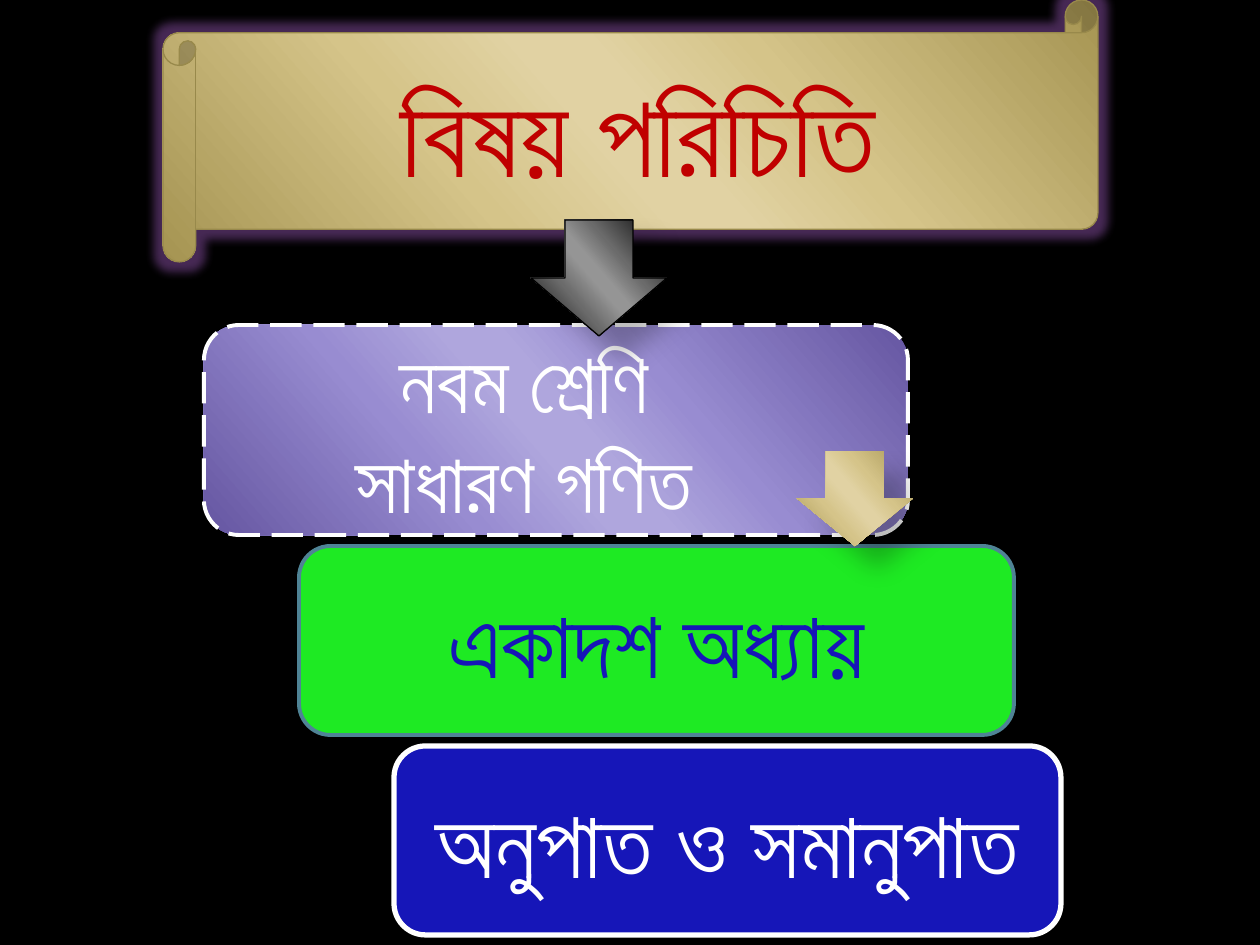
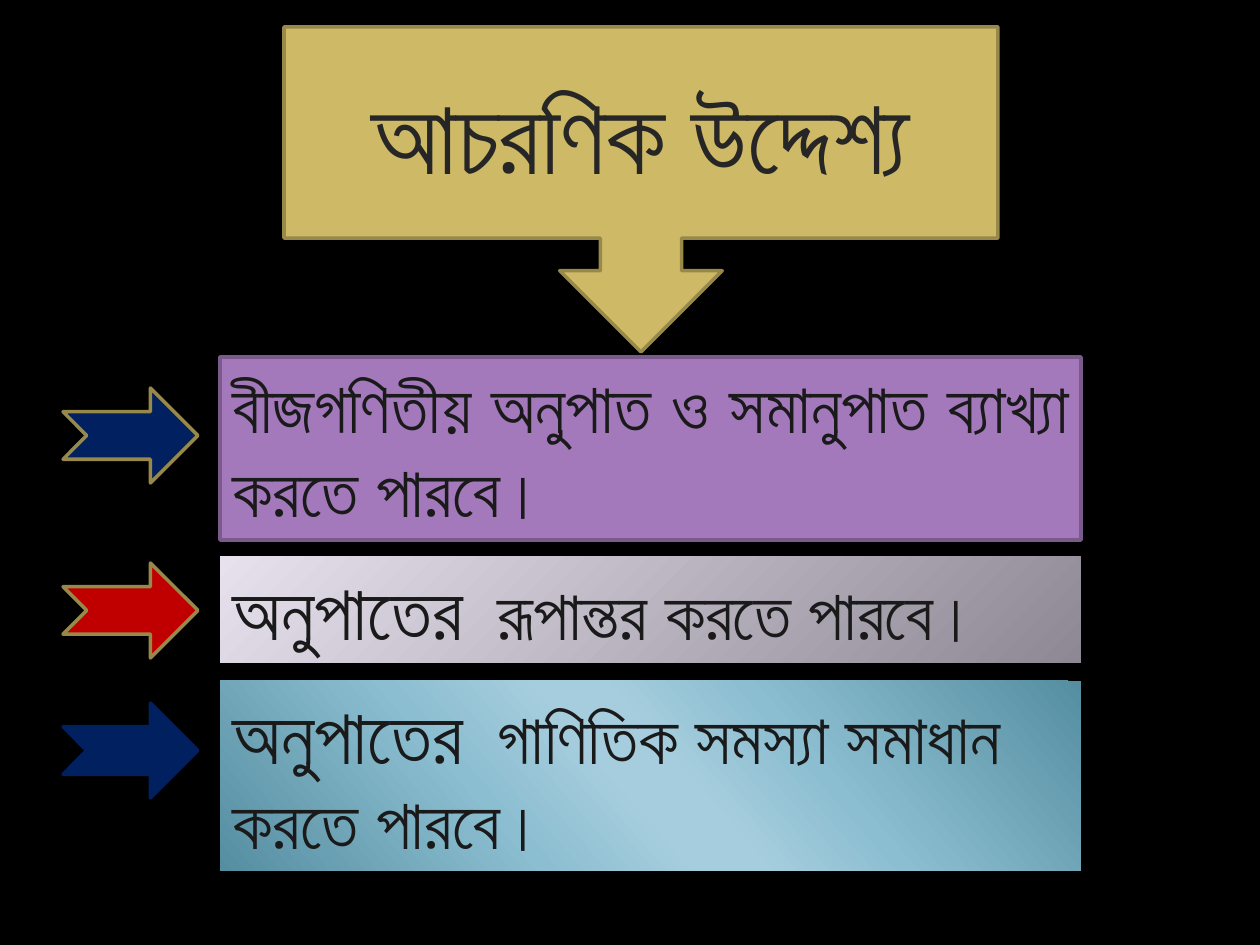
from pptx import Presentation
from pptx.dml.color import RGBColor
from pptx.enum.dml import MSO_LINE as Dash
from pptx.enum.shapes import MSO_SHAPE as Kind
from pptx.enum.text import MSO_ANCHOR as Anchor, MSO_AUTO_SIZE as Fit, PP_ALIGN as Align
from pptx.oxml import parse_xml
from pptx.oxml.ns import nsdecls, qn
from pptx.util import Emu, Pt

SCALE = 9144000 / 1260
FONT = "Lato"
BLACK, WHITE, INK = "000000", "FFFFFF", "1A1A1B"
NAVY, RED, BLUE, GOLD = "002060", "C00000", "1616B8", "98894B"
SOFT = (32, 3.5, 2.2, 90)
DEEP = (26, 15, 18, 45)
LINEAR = '<a:lin ang="8340000" scaled="0"/>'
RADIAL = '<a:path path="circle"><a:fillToRect r="100000" b="100000"/></a:path>'


def px(num):
    """Turn px into EMU."""
    return Emu(round(num * SCALE))


def hue(code):
    """Turn a hex string into a colour."""
    return RGBColor.from_string(code)


def sheen(dark, mid, light):
    """Give the stops of a band that shines in the middle."""
    return list(zip((0, 33, 47, 53, 68, 100), (dark, mid, light, light, mid, dark)))


TAN = sheen("A59452", "D5C489", "E1D2A3")
GREY = sheen(BLACK, "6B6B6B", "959595")
LILAC = sheen("6556A1", "988CD1", "AFA6DD")
TEAL = sheen("568EA1", "8CBED1", "A6CDDD")
PALE = [(0, "E6E1EC"), (100, "8E8895")]


def blend(shape, stops, style):
    """Fill a shape with a gradient."""
    shape.fill.gradient()
    old = shape._element.spPr.find(qn("a:gradFill"))
    marks = "".join(f'<a:gs pos="{pos * 1000}"><a:srgbClr val="{code}"/></a:gs>'
                    for pos, code in stops)
    new = parse_xml(f'<a:gradFill {nsdecls("a")} rotWithShape="1">'
                    f'<a:gsLst>{marks}</a:gsLst>{style}</a:gradFill>')
    old.getparent().replace(old, new)


def effect(shape, tag, attrs, code, alpha):
    """Add a glow or a shadow to a shape."""
    box = shape._element.spPr.find(qn("a:effectLst"))
    box.append(parse_xml(f'<a:{tag} {nsdecls("a")} {attrs}><a:srgbClr val="{code}">'
                         f'<a:alpha val="{alpha * 1000}"/></a:srgbClr></a:{tag}>'))


def shade(shape, alpha, blur, dist, angle):
    """Cast a black shadow, with blur and distance in points."""
    attrs = (f'blurRad="{Pt(blur)}" dist="{Pt(dist)}" dir="{angle * 60000}" '
             'algn="ctr" rotWithShape="0"')
    effect(shape, "outerShdw", attrs, BLACK, alpha)


def draw(slide, kind, area, fill, line=None, width=2, shadow=None, style=LINEAR):
    """Draw a preset shape with a plain or blended fill."""
    shape = slide.shapes.add_shape(kind, *map(px, area))
    shape.shadow.inherit = False
    if isinstance(fill, str):
        shape.fill.solid()
        shape.fill.fore_color.rgb = hue(fill)
    else:
        blend(shape, fill, style)
    if line:
        shape.line.color.rgb = hue(line)
        shape.line.width = Pt(width)
    else:
        shape.line.fill.background()
    if shadow:
        shade(shape, *shadow)
    return shape


def add_run(para, text, size, code, bold=None, track=0):
    """Add one run, with extra tracking in points."""
    run = para.add_run()
    run.text = text
    font = run.font
    font.name, font.size, font.bold = FONT, Pt(size), bold
    font.color.rgb = hue(code)
    if track:
        run._r.get_or_add_rPr().set("spc", str(track * 100))


def set_frame(shape, anchor=Anchor.MIDDLE, align=Align.CENTER):
    """Prepare a text frame and return its first paragraph."""
    frame = shape.text_frame
    frame.word_wrap = True
    frame.auto_size = Fit.NONE
    frame.vertical_anchor = anchor
    para = frame.paragraphs[0]
    para.alignment = align
    return para


def add_title(slide, area, text, size, code):
    """Place the title in front of its banner."""
    title = slide.shapes.title
    title.left, title.top, title.width, title.height = map(px, area)
    slide.shapes._spTree.append(title._element)
    add_run(set_frame(title), text, size, code)


def label(shape, text, code):
    """Write one centred line in a card."""
    add_run(set_frame(shape), text, 54, code)


def add_goal(slide, area, head, rest, **look):
    """Draw a goal panel with a larger first word."""
    panel = draw(slide, Kind.RECTANGLE, area, **look)
    para = set_frame(panel, Anchor.TOP, Align.LEFT)
    if head:
        add_run(para, head, 44, INK)
        add_run(para, " ", 40, INK, track=10)
    else:
        para.alignment = Align.JUSTIFY
    add_run(para, rest, 40, INK)


def topic(slide):
    """Build the subject slide."""
    scroll = draw(slide, Kind.HORIZONTAL_SCROLL, (163, 0, 935, 262), TAN, GOLD, 0.75)
    effect(scroll, "glow", f'rad="{Pt(11)}"', "B166D4", 40)
    add_title(slide, (196, 33, 884, 197), "বিষয় পরিচিতি", 66, RED)

    grade = draw(slide, Kind.ROUNDED_RECTANGLE, (204, 325, 704, 210),
                 LILAC, WHITE, 2.25, SOFT)
    grade.line.dash_style = Dash.LONG_DASH
    para = set_frame(grade)
    para._p.get_or_add_pPr().set("marR", str(px(64)))
    add_run(para, "নবম শ্রেণি", 48, WHITE)
    para = grade.text_frame.add_paragraph()
    para.alignment = Align.CENTER
    for text, bold in (("সাধার", False), ("ণ", True), (" গণিত", False)):
        add_run(para, text, 48, WHITE, bold)

    draw(slide, Kind.DOWN_ARROW, (531, 220, 136, 116), GREY, BLACK, 0.75, DEEP)
    unit = draw(slide, Kind.ROUNDED_RECTANGLE, (299, 546, 715, 189),
                "1EEA23", "4F8395", 2.25)
    label(unit, "একাদশ অধ্যায়", BLUE)
    theme = draw(slide, Kind.ROUNDED_RECTANGLE, (394, 746, 667, 189),
                 BLUE, WHITE, 3, SOFT)
    label(theme, "অনুপাত ও সমানুপাত", WHITE)
    draw(slide, Kind.DOWN_ARROW, (797, 451, 116, 95), TAN, shadow=DEEP)


def goals(slide):
    """Build the learning goals slide."""
    left, wide = 220, 861
    draw(slide, Kind.DOWN_ARROW_CALLOUT, (284, 27, 714, 325), "CEB966", GOLD)
    add_title(slide, (284, 27, 714, 211), "আচরণিক উদ্দেশ্য", 60, "262626")
    add_goal(slide, (left, 357, wide, 183), None,
             "বীজগণিতীয় অনুপাত ও সমানুপাত ব্যাখ্যা করতে পারবে।",
             fill="A379BB", line="795A8A")
    add_goal(slide, (left, 557, wide, 106), "অনুপাতের", "রূপান্তর করতে পারবে।",
             fill=PALE, style=RADIAL)
    add_goal(slide, (left, 681, wide, 190), "অনুপাতের",
             "গাণিতিক সমস্যা সমাধান করতে পারবে।", fill=TEAL, shadow=DEEP)
    for top, fill, line in ((388, NAVY, GOLD), (563, RED, GOLD), (703, NAVY, NAVY)):
        draw(slide, Kind.NOTCHED_RIGHT_ARROW, (63, top, 135, 95), fill, line)


def main():
    """Build and save the deck."""
    deck = Presentation()
    deck.slide_width, deck.slide_height = px(1260), px(945)
    back = deck.slide_master.background.fill
    back.solid()
    back.fore_color.rgb = hue(BLACK)
    for build in (topic, goals):
        build(deck.slides.add_slide(deck.slide_layouts[5]))
    deck.save("out.pptx")


if __name__ == "__main__":
    main()
